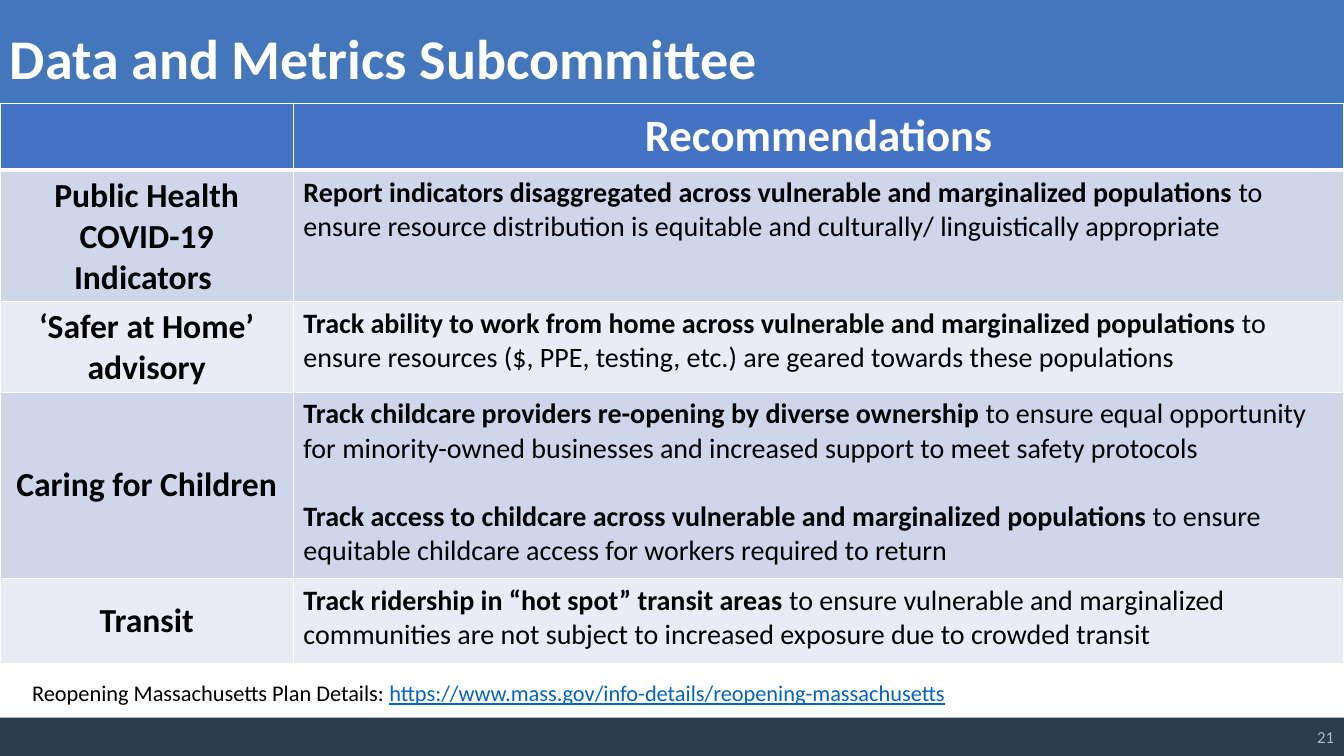
from dataclasses import dataclass

import pptx
import pptx.dml.color
import pptx.enum.shapes
import pptx.enum.text
import pptx.oxml
import pptx.oxml.ns
import pptx.util

Inches = pptx.util.Inches
Align = pptx.enum.text.PP_ALIGN
Anchor = pptx.enum.text.MSO_ANCHOR


@dataclass(frozen=True)
class Theme:
    font: str = "Calibri"
    banner: str = "4376BB"
    footer: str = "2A3C4E"
    header: str = "4472C4"
    bands: tuple[str, str] = ("CFD5EA", "E9EBF5")
    white: str = "FFFFFF"
    black: str = "000000"
    link: str = "0563C1"
    page_number: str = "ADB9CA"
    title_size: int = 40
    header_size: int = 32
    topic_size: int = 24
    body_size: int = 20
    source_size: int = 16
    page_size: int = 12
    paragraph_gap: float = 24.4


@dataclass(frozen=True)
class Recommendation:
    action: str
    purpose: str


@dataclass(frozen=True)
class Topic:
    name: str
    height: float
    recommendations: tuple[Recommendation, ...]


THEME = Theme()
SLIDE_WIDTH, SLIDE_HEIGHT = 13.33, 7.5
TOPIC_WIDTH = 2.91
HEADER_HEIGHT = 0.66
TABLE_TOP = 1.03

TOPICS = (
    Topic("Public Health COVID-19 Indicators ", 1.3, (
        Recommendation(
            "Report indicators disaggregated across vulnerable and marginalized populations",
            " to ensure resource distribution is equitable and culturally/ linguistically appropriate"),
    )),
    Topic("‘Safer at Home’ advisory", 0.9, (
        Recommendation(
            "Track ability to work from home across vulnerable and marginalized populations ",
            "to ensure resources ($, PPE, testing, etc.) are geared towards these populations"),
    )),
    Topic("Caring for Children", 1.85, (
        Recommendation(
            "Track childcare providers re-opening by diverse ownership ",
            "to ensure equal opportunity for minority-owned businesses and increased support "
            "to meet safety protocols"),
        Recommendation(
            "Track access to childcare across vulnerable and marginalized populations ",
            "to ensure equitable childcare access for workers required to return"),
    )),
    Topic("Transit", 0.84, (
        Recommendation(
            "Track ridership in “hot spot” transit areas ",
            "to ensure vulnerable and marginalized communities are not subject to increased "
            "exposure due to crowded transit"),
    )),
)


def rgb(color: str) -> pptx.dml.color.RGBColor:
    return pptx.dml.color.RGBColor.from_string(color)


def write(paragraph, text: str, *, size: int, color: str = THEME.black, bold: bool = False,
          underline: bool = False, align: Align = Align.LEFT) -> None:
    paragraph.alignment = align
    run = paragraph.add_run()
    run.text = text
    run.font.name = THEME.font
    run.font.size = pptx.util.Pt(size)
    run.font.color.rgb = rgb(color)
    run.font.bold = bold
    run.font.underline = underline


def add_band(slide, top: float, height: float, color: str) -> None:
    band = slide.shapes.add_shape(
        pptx.enum.shapes.MSO_SHAPE.RECTANGLE,
        0, Inches(top), Inches(SLIDE_WIDTH), Inches(height))
    band.shadow.inherit = False
    band.fill.solid()
    band.fill.fore_color.rgb = rgb(color)
    band.line.fill.background()


def add_text_area(slide, left: float, top: float, width: float, height: float,
                  anchor: Anchor = Anchor.TOP):
    frame = slide.shapes.add_textbox(
        Inches(left), Inches(top), Inches(width), Inches(height)).text_frame
    frame.word_wrap = True
    frame.vertical_anchor = anchor
    return frame.paragraphs[0]


def style_cell(cell, fill: str, top_width: int = 1, bottom_width: int = 1) -> None:
    properties = cell._tc.get_or_add_tcPr()
    widths = {"lnL": 1, "lnR": 1, "lnT": top_width, "lnB": bottom_width}
    for side, width in widths.items():
        properties.append(pptx.oxml.parse_xml(
            f'<a:{side} {pptx.oxml.ns.nsdecls("a")} w="{pptx.util.Pt(width)}">'
            f'<a:solidFill><a:srgbClr val="{THEME.white}"/></a:solidFill></a:{side}>'))
    cell.fill.solid()
    cell.fill.fore_color.rgb = rgb(fill)


def fill_topic_row(topic: Topic, name_cell, recommendation_cell) -> None:
    name_cell.vertical_anchor = Anchor.MIDDLE
    write(name_cell.text_frame.paragraphs[0], topic.name,
          size=THEME.topic_size, bold=True, align=Align.CENTER)
    frame = recommendation_cell.text_frame
    for index, recommendation in enumerate(topic.recommendations):
        paragraph = frame.add_paragraph() if index else frame.paragraphs[0]
        if index:
            paragraph.space_before = pptx.util.Pt(THEME.paragraph_gap)
        write(paragraph, recommendation.action, size=THEME.body_size, bold=True)
        write(paragraph, recommendation.purpose, size=THEME.body_size)


def add_recommendations(slide) -> None:
    heights = [HEADER_HEIGHT, *(topic.height for topic in TOPICS)]
    table = slide.shapes.add_table(
        len(heights), 2, 0, Inches(TABLE_TOP),
        Inches(SLIDE_WIDTH), Inches(sum(heights))).table
    for column, width in zip(table.columns, (TOPIC_WIDTH, SLIDE_WIDTH - TOPIC_WIDTH)):
        column.width = Inches(width)
    for row, height in zip(table.rows, heights):
        row.height = Inches(height)
    for column in range(2):
        style_cell(table.cell(0, column), THEME.header, bottom_width=3)
    write(table.cell(0, 1).text_frame.paragraphs[0], "Recommendations",
          size=THEME.header_size, color=THEME.white, bold=True, align=Align.CENTER)
    for index, topic in enumerate(TOPICS):
        cells = [table.cell(index + 1, column) for column in range(2)]
        for cell in cells:
            style_cell(cell, THEME.bands[index % 2], top_width=1 if index else 3)
        fill_topic_row(topic, *cells)


def main() -> None:
    presentation = pptx.Presentation()
    presentation.slide_width = Inches(SLIDE_WIDTH)
    presentation.slide_height = Inches(SLIDE_HEIGHT)
    slide = presentation.slides.add_slide(presentation.slide_layouts[6])

    add_band(slide, 0, 1.07, THEME.banner)
    add_band(slide, 7.12, 0.38, THEME.footer)
    write(add_text_area(slide, 0, 0.18, 13.01, 0.77), "Data and Metrics Subcommittee",
          size=THEME.title_size, color=THEME.white, bold=True)

    plan_source = add_text_area(slide, 0.22, 6.69, 11.45, 0.64)
    write(plan_source, "Reopening Massachusetts Plan Details: ", size=THEME.source_size)
    write(plan_source, "https://www.mass.gov/info-details/reopening-massachusetts",
          size=THEME.source_size, color=THEME.link, underline=True)

    add_recommendations(slide)
    write(add_text_area(slide, 10.34, 7.11, 2.99, 0.4, Anchor.MIDDLE), "21",
          size=THEME.page_size, color=THEME.page_number, align=Align.RIGHT)
    presentation.save("out.pptx")


if __name__ == "__main__":
    main()
